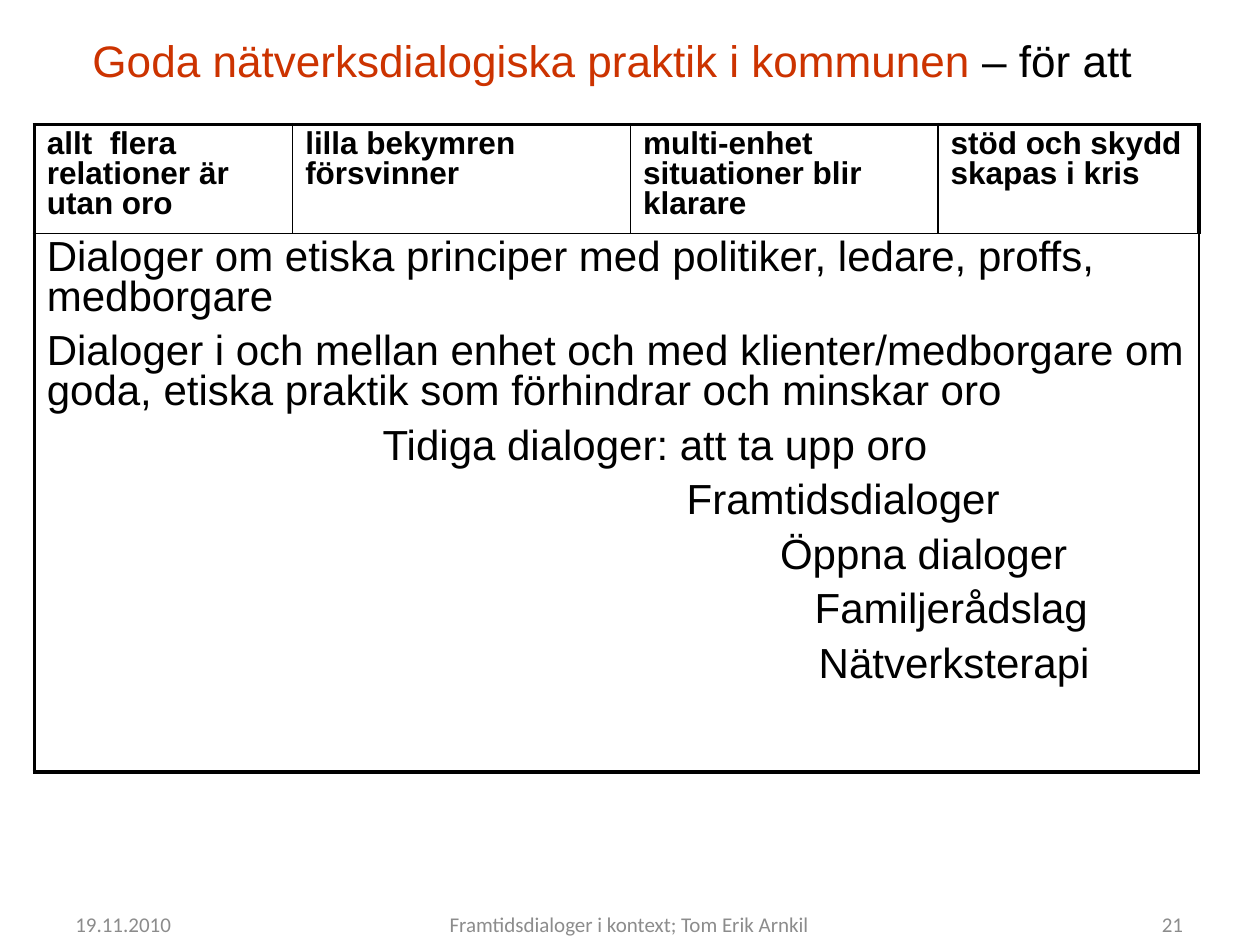
from lxml import etree
from pptx import Presentation
from pptx.dml.color import RGBColor
from pptx.enum.text import MSO_ANCHOR, PP_ALIGN
from pptx.oxml.ns import qn
from pptx.util import Cm, Pt

LEFT, CENTER, RIGHT = PP_ALIGN.LEFT, PP_ALIGN.CENTER, PP_ALIGN.RIGHT
MIDDLE = MSO_ANCHOR.MIDDLE
BLACK, RED, GREY = "000000", "CC3300", "8C8C8C"
THICK, THIN = 2.25, 1

COLUMN_WIDTHS = [5.21, 6.81, 6.2, 5.26]
ROW_HEIGHTS = [2.08, 10.85]
HEADINGS = [
    "allt  flera relationer är utan oro",
    "lilla bekymren försvinner",
    "multi-enhet situationer blir klarare",
    "stöd och skydd skapas i kris",
]
# Each dialogue with its indent in centimetres
DIALOGUES = [
    ("Dialoger om etiska principer med politiker, ledare, proffs, medborgare", 0),
    ("Dialoger i och mellan enhet och med klienter/medborgare om goda, "
     "etiska praktik som förhindrar och minskar oro", 0),
    ("Tidiga dialoger: att ta upp oro", 6.77),
    ("Framtidsdialoger", 12.9),
    ("Öppna dialoger", 14.78),
    ("Familjerådslag", 15.48),
    ("Nätverksterapi", 15.56),
]


def color(value):
    return RGBColor.from_string(value)


def add_text(paragraph, text, size=12, font="Arial", fill=BLACK, bold=False,
             align=LEFT, spacing=None, before=0, indent=0):
    """Add a formatted run and set the format of its paragraph."""
    run = paragraph.add_run()
    run.text = text
    run.font.size, run.font.name, run.font.bold = Pt(size), font, bold
    run.font.color.rgb = color(fill)
    paragraph.alignment = align
    paragraph.space_before = Pt(before)
    if spacing:
        paragraph.line_spacing = spacing
    if indent:
        paragraph._p.get_or_add_pPr().set("marL", str(Cm(indent)))


def add_text_box(slide, left, top, width, height):
    """Add a centred-in-height box without insets; return its paragraph."""
    shape = slide.shapes.add_textbox(Cm(left), Cm(top), Cm(width), Cm(height))
    frame = shape.text_frame
    frame.word_wrap = True
    frame.vertical_anchor = MIDDLE
    frame.margin_left = frame.margin_right = 0
    frame.margin_top = frame.margin_bottom = 0
    return frame.paragraphs[0]


def set_borders(cell, **widths):
    properties = cell._tc.get_or_add_tcPr()
    for side in "LRTB":
        line = etree.SubElement(properties, qn(f"a:ln{side}"), w=str(Pt(widths[side])))
        fill = etree.SubElement(line, qn("a:solidFill"))
        etree.SubElement(fill, qn("a:srgbClr"), val=BLACK)


def add_title(slide, left, top, width, height):
    paragraph = add_text_box(slide, left, top, width, height)
    add_text(paragraph, "Goda nätverksdialogiska praktik i kommunen",
             size=25.2, fill=RED, align=CENTER)
    add_text(paragraph, " – för att", size=25.2, align=CENTER)


def add_practice_table(slide, left, top):
    rows, columns = len(ROW_HEIGHTS), len(COLUMN_WIDTHS)
    table = slide.shapes.add_table(
        rows, columns, Cm(left), Cm(top),
        Cm(sum(COLUMN_WIDTHS)), Cm(sum(ROW_HEIGHTS))).table
    table.first_row = table.horz_banding = False
    for column, width in zip(table.columns, COLUMN_WIDTHS):
        column.width = Cm(width)
    for row, height in zip(table.rows, ROW_HEIGHTS):
        row.height = Cm(height)

    # Thick outer frame, thin inner lines
    for r in range(rows):
        for c in range(columns):
            cell = table.cell(r, c)
            set_borders(cell,
                        L=THICK if c == 0 else THIN,
                        R=THICK if c == columns - 1 else THIN,
                        T=THICK if r == 0 else THIN,
                        B=THICK if r == rows - 1 else THIN)
            cell.fill.background()
            cell.margin_right = Cm(0.15)

    # Headings
    for c, heading in enumerate(HEADINGS):
        add_text(table.cell(0, c).text_frame.paragraphs[0], heading,
                 size=18, bold=True, spacing=0.85)

    # Dialogues in one merged cell
    body = table.cell(1, 0)
    body.merge(table.cell(1, columns - 1))
    frame = body.text_frame
    for i, (text, indent) in enumerate(DIALOGUES):
        paragraph = frame.add_paragraph() if i else frame.paragraphs[0]
        add_text(paragraph, text, size=24, spacing=0.85,
                 before=8.4 if i else 0, indent=indent)


def add_footer(slide, left, top, width, height):
    side = 3.02
    parts = [
        ("19.11.2010", 0, side, LEFT),
        ("Framtidsdialoger i kontext; Tom Erik Arnkil", side, width - 2 * side, CENTER),
        ("21", width - side, side, RIGHT),
    ]
    inset = 0.25
    for text, offset, part_width, align in parts:
        paragraph = add_text_box(slide, left + offset + inset, top,
                                 part_width - 2 * inset, height)
        add_text(paragraph, text, font="Calibri", fill=GREY, align=align)


def main():
    presentation = Presentation()
    presentation.slide_width, presentation.slide_height = Cm(25.4), Cm(19.05)
    slide = presentation.slides.add_slide(presentation.slide_layouts[6])
    add_footer(slide, 1.27, 18.33, 22.83, 0.61)
    add_title(slide, 1.57, 0.41, 21.54, 1.6)
    add_practice_table(slide, 0.69, 2.51)
    presentation.save("out.pptx")


if __name__ == "__main__":
    main()
